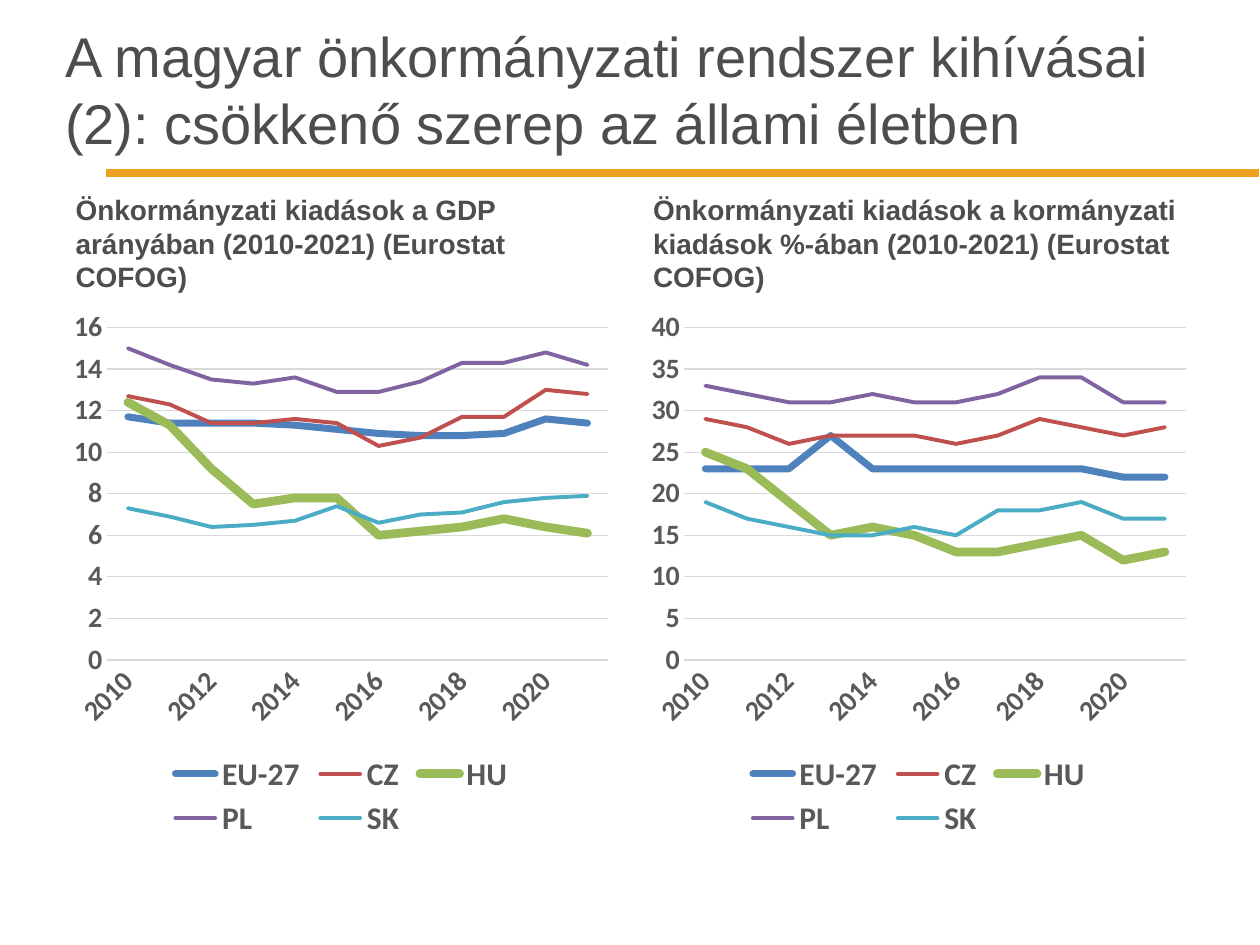
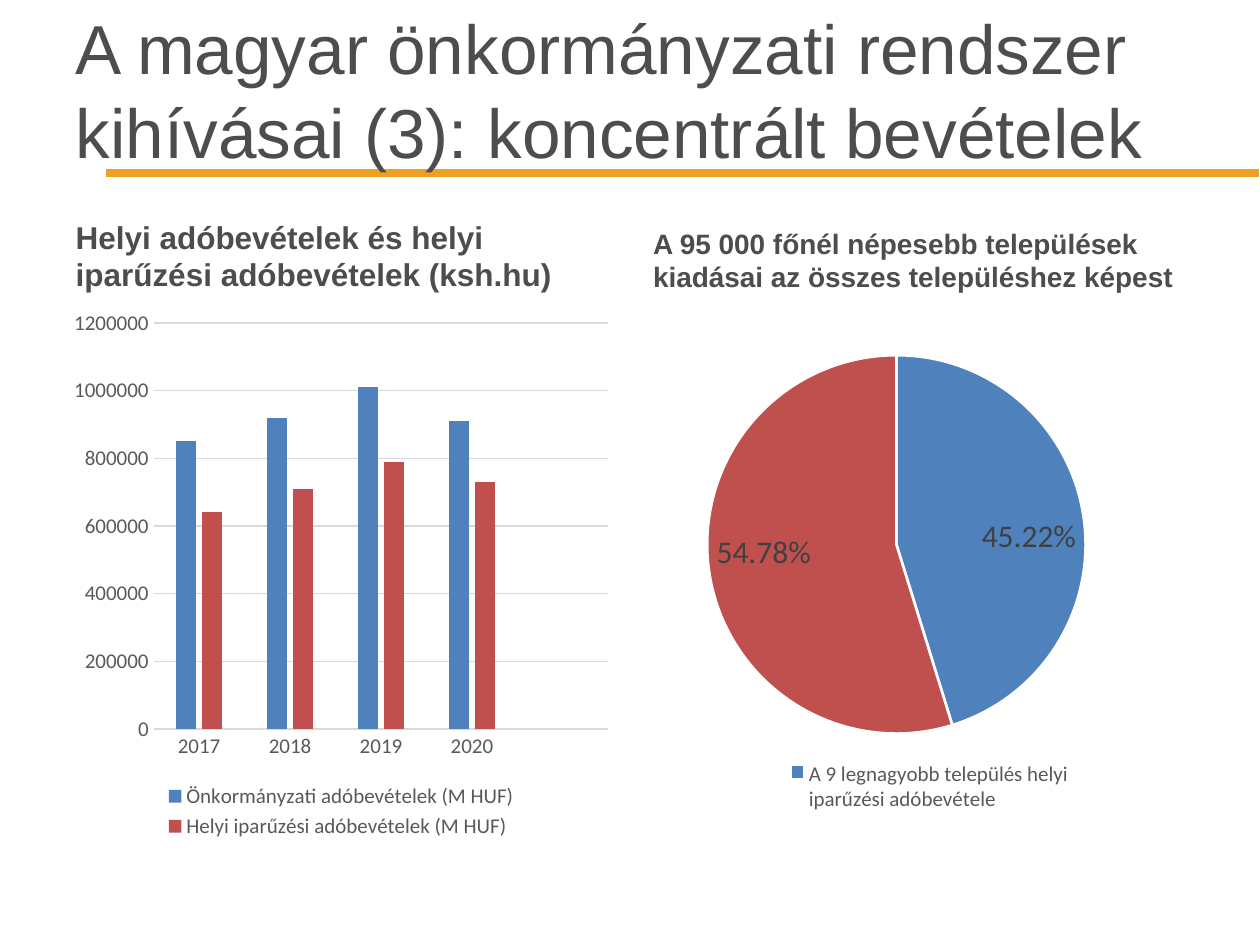
import lxml.etree
import pptx
import pptx.chart.data
import pptx.dml.color
import pptx.enum.chart
import pptx.enum.shapes
import pptx.enum.text
import pptx.oxml.ns
import pptx.util

Cm, Pt = pptx.util.Cm, pptx.util.Pt
XL = pptx.enum.chart.XL_CHART_TYPE

COLORS = {
    "band": "EDA021", "white": "FFFFFF", "heading": "4D4D4D",
    "axis_text": "595959", "label": "404040", "grid": "D9D9D9",
    "blue": "4F81BD", "red": "C0504D", "green": "9BBB59",
    "purple": "8064A2", "teal": "4BACC6",
}
LEFT, RIGHT = Cm(1.27), Cm(12.91)
COLUMN_W = Cm(11.22)
HEADING_BOX = {"top": Cm(4.26), "width": COLUMN_W, "height": Cm(1.78)}
TITLE_BOX = {"top": Cm(0.2), "width": Cm(22.86), "height": Cm(3.18)}
CHART_TOP, CHART_H = Cm(6.04), Cm(10.97)

YEARS = [str(year) for year in range(2010, 2022)]
COUNTRY_LINES = {  # colour, line width
    "EU-27": ("blue", 4), "CZ": ("red", 2.25), "HU": ("green", 5),
    "PL": ("purple", 2.25), "SK": ("teal", 2.25),
}
GDP_SHARE = {
    "EU-27": [11.7, 11.4, 11.4, 11.4, 11.3, 11.1, 10.9, 10.8, 10.8, 10.9, 11.6, 11.4],
    "CZ": [12.7, 12.3, 11.4, 11.4, 11.6, 11.4, 10.3, 10.7, 11.7, 11.7, 13, 12.8],
    "HU": [12.4, 11.3, 9.2, 7.5, 7.8, 7.8, 6, 6.2, 6.4, 6.8, 6.4, 6.1],
    "PL": [15, 14.2, 13.5, 13.3, 13.6, 12.9, 12.9, 13.4, 14.3, 14.3, 14.8, 14.2],
    "SK": [7.3, 6.9, 6.4, 6.5, 6.7, 7.4, 6.6, 7, 7.1, 7.6, 7.8, 7.9],
}
GOVERNMENT_SHARE = {
    "EU-27": [23, 23, 23, 27, 23, 23, 23, 23, 23, 23, 22, 22],
    "CZ": [29, 28, 26, 27, 27, 27, 26, 27, 29, 28, 27, 28],
    "HU": [25, 23, 19, 15, 16, 15, 13, 13, 14, 15, 12, 13],
    "PL": [33, 32, 31, 31, 32, 31, 31, 32, 34, 34, 31, 31],
    "SK": [19, 17, 16, 15, 15, 16, 15, 18, 18, 19, 17, 17],
}
TAX_REVENUE = {
    "Önkormányzati adóbevételek (M HUF)": [850000, 920000, 1010000, 910000, None],
    "Helyi iparűzési adóbevételek (M HUF)": [640000, 710000, 790000, 730000, None],
}
SETTLEMENT_SHARE = {
    "A 9 legnagyobb település helyi iparűzési adóbevétele": 0.4522,
    "": 0.5478,
}


def rgb(name):
    return pptx.dml.color.RGBColor.from_string(COLORS[name])


def set_attrs(obj, values):
    for name, value in values.items():
        setattr(obj, name, value)


def set_font(font, size, color, bold=False, name="Calibri"):
    set_attrs(font, {"size": Pt(size), "bold": bold, "name": name})
    font.color.rgb = rgb(color)


def set_fill(fmt, color):
    fmt.fill.solid()
    fmt.fill.fore_color.rgb = rgb(color)


def set_line(line, color, width):
    line.color.rgb = rgb(color)
    line.width = Pt(width)


def fill_placeholder(sp, text, box, size, anchor, bold=False):
    set_attrs(sp, box)
    tf = sp.text_frame
    tf.text = text
    set_attrs(tf, {"word_wrap": True, "vertical_anchor": anchor,
                   "auto_size": pptx.enum.text.MSO_AUTO_SIZE.NONE})
    p = tf.paragraphs[0]
    set_attrs(p, {"alignment": pptx.enum.text.PP_ALIGN.LEFT, "space_before": Pt(0)})
    set_font(p.runs[0].font, size, "heading", bold, "Arial")


def add_comparison_slide(prs, title, title_left, title_size, headings):
    """Add a titled slide with a (text, size) heading over each column."""
    s = prs.slides.add_slide(prs.slide_layouts.get_by_name("Comparison"))
    anchor = pptx.enum.text.MSO_ANCHOR
    fill_placeholder(s.shapes.title, title, {"left": title_left, **TITLE_BOX},
                     title_size, anchor.MIDDLE)
    for idx, left, (text, size) in zip((1, 3), (LEFT, RIGHT), headings):
        fill_placeholder(s.placeholders[idx], text, {"left": left, **HEADING_BOX},
                         size, anchor.BOTTOM, bold=True)
    for idx in (2, 4):
        sp = s.placeholders[idx].element
        sp.getparent().remove(sp)
    return s


def add_band(s):
    """Put the coloured band behind everything on the layout of the slide."""
    band = s.shapes.add_shape(pptx.enum.shapes.MSO_SHAPE.RECTANGLE,
                              Cm(2.12), Cm(3.39), Cm(23.28), Cm(0.2))
    band.shadow.inherit = False
    set_fill(band, "band")
    set_line(band.line, "white", 0.75)
    band.element.xpath(".//p:cNvPr")[0].set("id", "20")
    s.slide_layout.shapes.element.insert(2, band.element)


def add_chart(s, kind, left, categories, series, legend_size, bold=False):
    data = pptx.chart.data.CategoryChartData()
    data.categories = categories
    for name, values in series.items():
        data.add_series(name, values)
    chart = s.shapes.add_chart(kind, left, CHART_TOP, COLUMN_W, CHART_H, data).chart
    set_attrs(chart, {"has_title": False, "has_legend": True})
    set_attrs(chart.font, {"size": Pt(10), "name": "Calibri"})
    set_attrs(chart.legend, {"position": pptx.enum.chart.XL_LEGEND_POSITION.BOTTOM,
                             "include_in_layout": False})
    set_font(chart.legend.font, legend_size, "axis_text", bold)
    chart.plots[0].vary_by_categories = kind == XL.PIE
    return chart


def format_axes(chart, size, top, step, bold=False):
    for axis in (chart.category_axis, chart.value_axis):
        axis.major_tick_mark = pptx.enum.chart.XL_TICK_MARK.NONE
        set_font(axis.tick_labels.font, size, "axis_text", bold)
    set_line(chart.category_axis.format.line, "grid", 0.75)
    value = chart.value_axis
    set_attrs(value, {"minimum_scale": 0, "maximum_scale": top, "major_unit": step})
    value.format.line.fill.background()
    set_line(value.major_gridlines.format.line, "grid", 0.75)


def add_country_chart(s, left, shares, top, step):
    chart = add_chart(s, XL.LINE, left, YEARS, shares, 18, bold=True)
    format_axes(chart, 16, top, step, bold=True)
    for series in chart.plots[0].series:
        set_line(series.format.line, *COUNTRY_LINES[series.name])
        series.smooth = False
        series.marker.style = pptx.enum.chart.XL_MARKER_STYLE.NONE
    for ln in chart.element.xpath(".//c:ser/c:spPr/a:ln"):
        ln.set("cap", "rnd")
    chart.element.xpath(".//c:catAx/c:txPr/a:bodyPr")[0].set("rot", "-2700000")


def add_tax_chart(s):
    years = ["2017", "2018", "2019", "2020", ""]
    chart = add_chart(s, XL.COLUMN_CLUSTERED, LEFT, years, TAX_REVENUE, 12)
    format_axes(chart, 12, 1200000, 200000)
    set_attrs(chart.plots[0], {"gap_width": 219, "overlap": -27})
    for series, color in zip(chart.plots[0].series, ("blue", "red")):
        set_fill(series.format, color)


def chart_tag(parent, tag, val=None):
    child = lxml.etree.SubElement(parent, pptx.oxml.ns.qn("c:" + tag))
    if val is not None:
        child.set("val", str(val))
    return child


def place_chart_part(part, index, box):
    """Fix a plot area or legend at x, y, w, h as fractions of the chart."""
    for old in part.xpath("c:layout"):
        part.remove(old)
    layout = chart_tag(part, "layout")
    manual = chart_tag(layout, "manualLayout")
    if part.tag.endswith("plotArea"):
        chart_tag(manual, "layoutTarget", "inner")
    for mode in ("xMode", "yMode"):
        chart_tag(manual, mode, "edge")
    for name, value in zip("xywh", box):
        chart_tag(manual, name, value)
    part.insert(index, layout)


def hide_legend_entry(legend, index):
    entry = chart_tag(legend, "legendEntry")
    chart_tag(entry, "idx", index)
    chart_tag(entry, "delete", 1)
    legend.insert(1, entry)


def add_settlement_pie(s):
    chart = add_chart(s, XL.PIE, RIGHT, list(SETTLEMENT_SHARE),
                      {"Series 1": list(SETTLEMENT_SHARE.values())}, 12)
    plot = chart.plots[0]
    for i, color in enumerate(("blue", "red")):
        fmt = plot.series[0].points[i].format
        set_fill(fmt, color)
        set_line(fmt.line, "white", 1.5)
    plot.has_data_labels = True
    set_attrs(plot.data_labels, {
        "show_value": True, "show_percentage": False,
        "number_format": "0.00%", "number_format_is_linked": False,
        "position": pptx.enum.chart.XL_LABEL_POSITION.INSIDE_END})
    set_font(plot.data_labels.font, 18, "label")
    place_chart_part(chart.element.xpath(".//c:plotArea")[0], 0, (0.12, 0.1, 0.68, 0.7))
    legend = chart.element.xpath(".//c:legend")[0]
    hide_legend_entry(legend, 1)
    place_chart_part(legend, 2, (0.25, 0.84, 0.54, 0.11))


def main():
    prs = pptx.Presentation()
    set_attrs(prs, {"slide_width": Cm(25.4), "slide_height": Cm(19.05)})

    s = add_comparison_slide(
        prs, "A magyar önkormányzati rendszer kihívásai (2): csökkenő szerep az állami életben",
        Cm(1.06), 32,
        [("Önkormányzati kiadások a GDP arányában (2010-2021) (Eurostat COFOG)", 16),
         ("Önkormányzati kiadások a kormányzati kiadások %-ában (2010-2021) (Eurostat COFOG)", 16)])
    add_country_chart(s, LEFT, GDP_SHARE, 16, 2)
    add_country_chart(s, RIGHT, GOVERNMENT_SHARE, 40, 5)
    add_band(s)

    s = add_comparison_slide(
        prs, "A magyar önkormányzati rendszer kihívásai (3): koncentrált bevételek",
        LEFT, 39.6,
        [("Helyi adóbevételek és helyi iparűzési adóbevételek (ksh.hu)", 18),
         ("A 95 000 főnél népesebb települések kiadásai az összes településhez képest", 16)])
    add_tax_chart(s)
    add_settlement_pie(s)

    prs.save("out.pptx")


if __name__ == "__main__":
    main()
